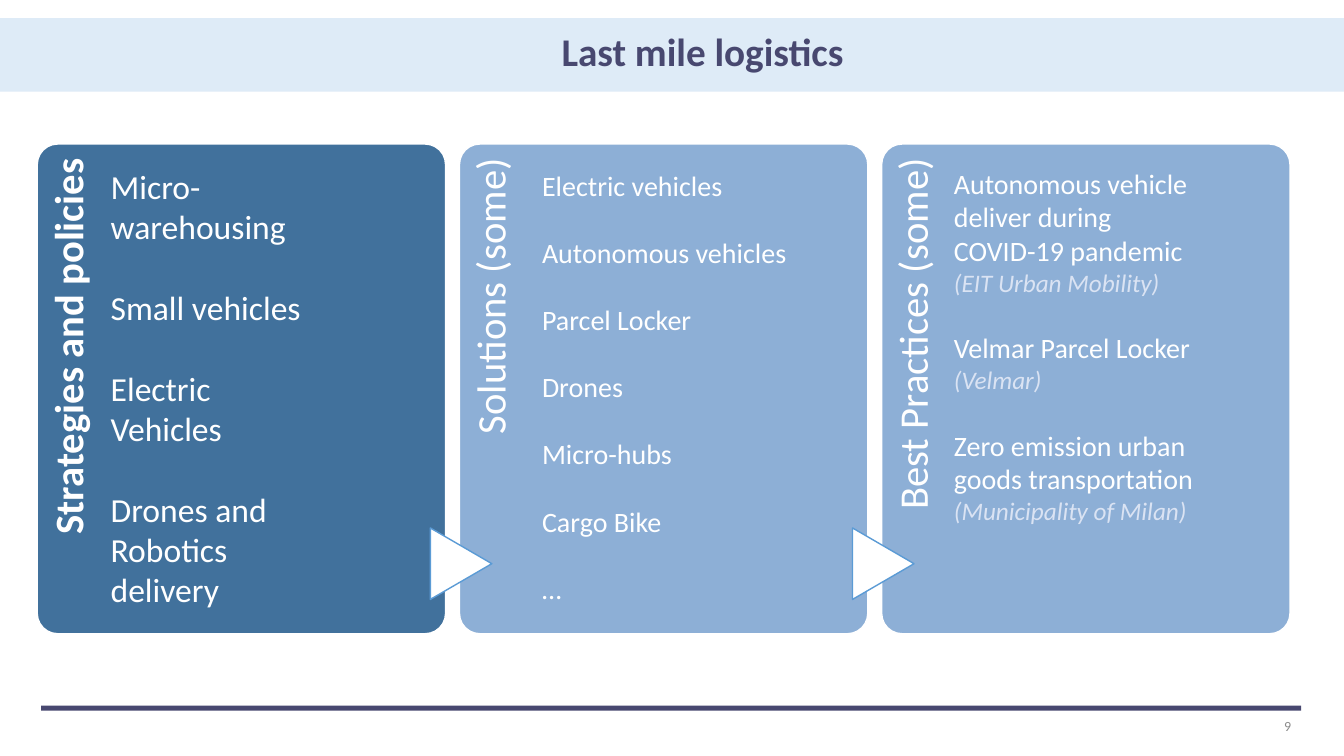
"""Build the last mile logistics slide."""
from dataclasses import dataclass

from pptx import Presentation
from pptx import util as u
from pptx.dml.color import RGBColor
from pptx.enum import shapes, text


@dataclass(frozen=True)
class Theme:
    """Colours, font and type sizes of the slide."""
    font: str = "Calibri"
    navy: str = "484870"
    band: str = "DEEBF7"
    strong: str = "41719C"
    soft: str = "8DAFD6"
    arrow_line: str = "5B9BD5"
    white: str = "FFFFFF"
    note: str = "DAE3F3"
    grey: str = "8C8C8C"
    title_size: float = 28
    label_size: float = 29
    large_size: float = 24
    body_size: float = 20
    note_size: float = 18
    number_size: float = 10


@dataclass(frozen=True)
class Panel:
    """Content of one panel; body is left, top, width, height inside it."""
    label: str
    fill: str
    size: float
    body: tuple
    items: list
    bold: bool = False


THEME = Theme()
PAGE_WIDTH, PAGE_HEIGHT = 33.87, 19.05
PANEL_BOX = (0.94, 3.63, 10.29, 12.34)
PANEL_PITCH = 10.64
LINE_HEIGHT = 1.2

PANELS = [
    Panel("Strategies and policies", THEME.strong, THEME.large_size,
          (1.6, 0.43, 5.77, 12.32),
          [("Micro-warehousing", ""), ("Small vehicles", ""),
           ("Electric Vehicles", ""), ("Drones and Robotics delivery", "")],
          bold=True),
    Panel("Solutions (some)", THEME.soft, THEME.body_size,
          (1.83, 0.48, 7.44, 11.38),
          [("Electric vehicles", ""), ("Autonomous vehicles", ""),
           ("Parcel Locker", ""), ("Drones", ""), ("Micro-hubs", ""),
           ("Cargo Bike", ""), ("…", "")]),
    Panel("Best Practices (some)", THEME.soft, THEME.body_size,
          (1.57, 0.43, 7.14, 9.65),
          [("Autonomous vehicle deliver during COVID-19 pandemic",
            "(EIT Urban Mobility)"),
           ("Velmar Parcel Locker", "(Velmar)"),
           ("Zero emission urban goods transportation",
            "(Municipality of Milan)")]),
]


def lengths(box):
    """Turn a box in centimetres into slide lengths."""
    return [u.Cm(value) for value in box]


def add_figure(page, kind, box, fill, line=None):
    """Add a filled preset shape without shadow."""
    figure = page.shapes.add_shape(kind, *lengths(box))
    figure.shadow.inherit = False
    figure.fill.solid()
    figure.fill.fore_color.rgb = RGBColor.from_string(fill)
    if line:
        figure.line.color.rgb = RGBColor.from_string(line)
        figure.line.width = u.Pt(1)
    else:
        figure.line.fill.background()
    return figure


def add_box(page, box, anchor=text.MSO_ANCHOR.TOP):
    """Add a wrapping text box."""
    area = page.shapes.add_textbox(*lengths(box))
    area.text_frame.word_wrap = True
    area.text_frame.vertical_anchor = anchor
    return area


def add_span(para, words, size, color, bold=False, italic=False):
    """Add one formatted run to a paragraph."""
    span = para.add_run()
    span.text = words
    span.font.name = THEME.font
    span.font.size = u.Pt(size)
    span.font.bold = bold
    span.font.italic = italic
    span.font.color.rgb = RGBColor.from_string(color)


def add_header(page, box):
    """Draw the title band and its title."""
    left, top, width, height = box
    add_figure(page, shapes.MSO_SHAPE.RECTANGLE, box, THEME.band)
    title = add_box(page, (left + 3.1, top - 0.03, 29.21, height),
                    text.MSO_ANCHOR.MIDDLE)
    para = title.text_frame.paragraphs[0]
    para.alignment = text.PP_ALIGN.CENTER
    para.line_spacing = 0.9
    add_span(para, "Last mile logistics", THEME.title_size, THEME.navy, bold=True)


def add_footer(page, box):
    """Draw the rule and the page number below it."""
    left, top, width, height = box
    add_figure(page, shapes.MSO_SHAPE.RECTANGLE, (left, top, width, 0.13), THEME.navy)
    number = add_box(page, (left + width - 7.62, top + 0.1, 7.62, height - 0.1),
                     text.MSO_ANCHOR.MIDDLE)
    para = number.text_frame.paragraphs[0]
    para.alignment = text.PP_ALIGN.RIGHT
    add_span(para, "9", THEME.number_size, THEME.grey)


def add_label(page, box, panel):
    """Write the panel label upwards in the column given by box."""
    left, top, width, height = box
    label = add_box(page, (left + (width - height) / 2, top + (height - width) / 2,
                           height, width))
    label.rotation = 270
    frame = label.text_frame
    frame.margin_left = frame.margin_bottom = 0
    frame.margin_top, frame.margin_right = u.Cm(0.28), u.Cm(0.36)
    para = frame.paragraphs[0]
    para.alignment = text.PP_ALIGN.RIGHT
    para.line_spacing = 0.9
    add_span(para, panel.label, THEME.label_size, THEME.white, bold=panel.bold)


def add_items(page, box, panel):
    """List the panel items one line apart, each with its optional note."""
    frame = add_box(page, box).text_frame
    for index, (words, note) in enumerate(panel.items):
        para = frame.add_paragraph() if index else frame.paragraphs[0]
        if index:
            para.space_before = u.Pt(panel.size * LINE_HEIGHT)
        add_span(para, words, panel.size, THEME.white)
        if note:
            para.add_line_break()
            add_span(para, note, THEME.note_size, THEME.note, italic=True)


def add_panel(page, box, panel, has_arrow):
    """Draw one panel with its label, incoming arrow and items."""
    left, top, width, height = box
    card = add_figure(page, shapes.MSO_SHAPE.ROUNDED_RECTANGLE, box,
                      panel.fill, THEME.white)
    card.adjustments[0] = 0.05
    add_label(page, (left, top, 2.06, 10.11), panel)
    if has_arrow:
        arrow = add_figure(page, shapes.MSO_SHAPE.FLOWCHART_EXTRACT,
                           (left - 0.86, top + 9.8, 1.8, 1.55),
                           THEME.white, THEME.arrow_line)
        arrow.rotation = 90
    inner_left, inner_top, inner_width, inner_height = panel.body
    add_items(page, (left + inner_left, top + inner_top, inner_width, inner_height),
              panel)


def main():
    """Build and save the deck."""
    deck = Presentation()
    deck.slide_width, deck.slide_height = u.Cm(PAGE_WIDTH), u.Cm(PAGE_HEIGHT)
    page = deck.slides.add_slide(deck.slide_layouts[6])
    add_header(page, (0, 0.46, PAGE_WIDTH, 1.85))
    add_footer(page, (1.04, 17.78, 31.75, 0.94))
    left, top, width, height = PANEL_BOX
    for index, panel in enumerate(PANELS):
        add_panel(page, (left + index * PANEL_PITCH, top, width, height),
                  panel, has_arrow=index > 0)
    deck.save("out.pptx")


if __name__ == "__main__":
    main()
